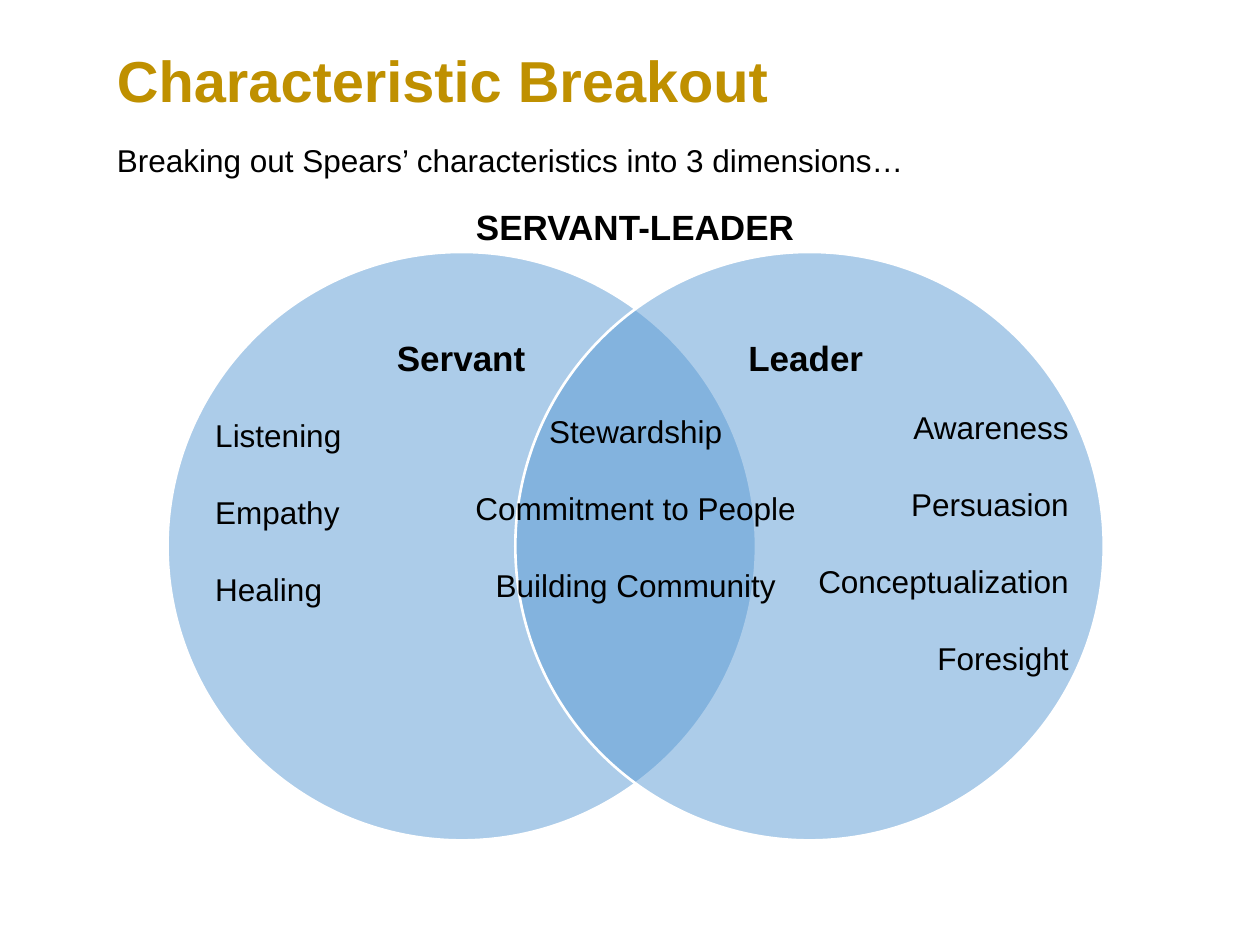
from pptx import Presentation
from pptx.dml.color import RGBColor
from pptx.enum import shapes, text
from pptx.oxml.xmlchemy import OxmlElement
from pptx.util import Inches, Pt

GOLD = RGBColor(0xBF, 0x90, 0x00)
BLUE = RGBColor(0x5B, 0x9B, 0xD5)
WHITE = RGBColor(0xFF, 0xFF, 0xFF)
BLACK = RGBColor(0, 0, 0)

LEFT, CENTER, RIGHT = (text.PP_ALIGN.LEFT, text.PP_ALIGN.CENTER,
                       text.PP_ALIGN.RIGHT)
BODY = {"name": "Arial", "size": Pt(18), "bold": False}
HEADING = {**BODY, "size": Pt(20), "bold": True}
TITLE = {**HEADING, "size": Pt(33)}
LIST_GAP = Pt(22.4)


def apply(target, values):
    for attribute, value in values.items():
        setattr(target, attribute, value)


def add_text(slide, box, lines, font, align=LEFT, color=BLACK,
             spacing=1.0, frame=None):
    """Place one paragraph per line in box (left, top, width, height)."""
    label = slide.shapes.add_textbox(*map(Inches, box)).text_frame
    apply(label, {"word_wrap": True, **(frame or {})})
    for index, line in enumerate(lines):
        paragraph = label.paragraphs[0] if index == 0 else label.add_paragraph()
        paragraph.text = line
        apply(paragraph, {"alignment": align, "line_spacing": spacing})
        if index:
            paragraph.space_before = LIST_GAP
        apply(paragraph.font, font)
        paragraph.font.color.rgb = color


def add_header(slide, left, top):
    add_text(slide, (left, top, 8.5, 0.83), ["Characteristic Breakout"], TITLE,
             color=GOLD, spacing=0.9,
             frame={"vertical_anchor": text.MSO_ANCHOR.MIDDLE})
    add_text(slide, (left, top + 0.82, 8.92, 0.4),
             ["Breaking out Spears’ characteristics into 3 dimensions…"], BODY)
    add_text(slide, (left, top + 1.33, 8.42, 0.44), ["SERVANT-LEADER"],
             HEADING, CENTER)


def add_circle(slide, left, top, size, name, side_insets):
    circle = slide.shapes.add_shape(
        shapes.MSO_SHAPE.OVAL, *map(Inches, (left, top, size, size)))
    circle.shadow.inherit = False
    circle.fill.solid()
    circle.fill.fore_color.rgb = BLUE
    # Half transparency lets the overlap show darker
    alpha = OxmlElement("a:alpha")
    alpha.set("val", "50000")
    circle.fill._xPr.find(".//{*}solidFill/{*}srgbClr").append(alpha)
    circle.line.color.rgb = WHITE
    circle.line.width = Pt(1.5)

    # Circle name, in the square inscribed in the circle
    inset, square = 0.68, 3.3
    margin_left, margin_right = map(Inches, side_insets)
    add_text(slide, (left + inset, top + inset, square, square), [name],
             HEADING, CENTER, spacing=0.9,
             frame={"margin_left": margin_left, "margin_right": margin_right,
                    "margin_top": Inches(0.03), "margin_bottom": Inches(0.03)})


def add_venn(slide, left, top, size):
    add_circle(slide, left, top, size, "Servant", (0, 0))
    add_circle(slide, left + 2.76, top, size, "Leader", (0.75, 0.8))

    # Characteristics: offset and size within the diagram
    characteristics = [
        ((4.75, 1.19, 2.5, 2.22), RIGHT,
         ["Awareness", "Persuasion", "Conceptualization", "Foresight"]),
        ((0.28, 1.25, 2.31, 1.62), LEFT, ["Listening", "Empathy", "Healing"]),
        ((2.34, 1.22, 2.75, 1.62), CENTER,
         ["Stewardship", "Commitment to People", "Building Community"]),
    ]
    for (dx, dy, width, height), align, names in characteristics:
        add_text(slide, (left + dx, top + dy, width, height), names, BODY, align)


def main():
    deck = Presentation()
    apply(deck, {"slide_width": Inches(10), "slide_height": Inches(7.5)})
    slide = deck.slides.add_slide(deck.slide_layouts[6])
    add_venn(slide, 1.33, 2, 4.67)
    add_header(slide, 0.83, 0.25)
    deck.save("out.pptx")


if __name__ == "__main__":
    main()
